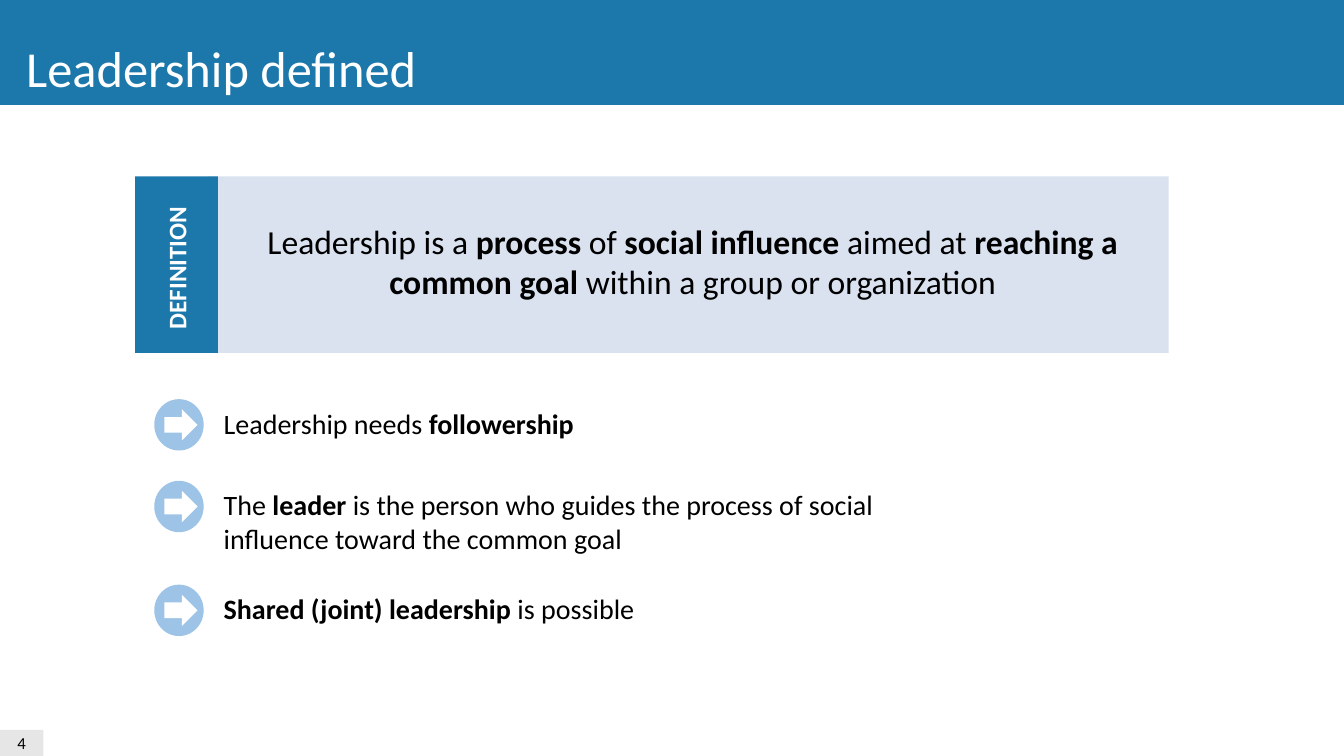
from pptx import Presentation
from pptx.dml.color import RGBColor
from pptx.enum.shapes import MSO_SHAPE
from pptx.enum.text import MSO_ANCHOR, MSO_AUTO_SIZE, PP_ALIGN
from pptx.util import Inches, Pt

BLUE = RGBColor(0x1C, 0x78, 0xAB)
PALE_BLUE = RGBColor(0xDA, 0xE2, 0xF0)
SKY = RGBColor(0x9D, 0xC3, 0xE6)
GREY = RGBColor(0xE7, 0xE6, 0xE6)
WHITE = RGBColor(0xFF, 0xFF, 0xFF)
BLACK = RGBColor(0, 0, 0)

DEFINITION = [("Leadership is a ", False), ("process ", True), ("of ", False),
              ("social influence ", True), ("aimed at ", False),
              ("reaching a common goal ", True),
              ("within a group or organization", False)]
# Top of each point and its runs (text, bold)
POINTS = [
    (3.96, [("Leadership needs ", False), ("followership", True)]),
    (4.77, [("The ", False), ("leader", True),
            (" is the person who guides the process of social influence "
             "toward the common goal", False)]),
    (5.8, [("Shared (joint) leadership ", True), ("is possible", False)]),
]


def add_block(shapes, kind, x, y, w, h, fill):
    sp = shapes.add_shape(kind, Inches(x), Inches(y), Inches(w), Inches(h))
    sp.shadow.inherit = False
    sp.fill.solid()
    sp.fill.fore_color.rgb = fill
    sp.line.fill.background()
    return sp


def write(tf, runs, size, color=BLACK, align=PP_ALIGN.LEFT):
    p = tf.paragraphs[0]
    p.alignment = align
    p.font.name = "Calibri"
    p.font.size = Pt(size)
    p.font.color.rgb = color
    for text, bold in runs:
        r = p.add_run()
        r.text = text
        if bold:
            r.font.bold = True


def add_text(shapes, x, y, w, h, runs, size, wrap=True, **style):
    sp = shapes.add_textbox(Inches(x), Inches(y), Inches(w), Inches(h))
    sp.text_frame.word_wrap = wrap
    write(sp.text_frame, runs, size, **style)
    return sp


def add_title(slide, x, y, w, h):
    add_block(slide.shapes, MSO_SHAPE.RECTANGLE, x, y, w, h, BLUE)
    title = slide.shapes.title
    title.left, title.top = Inches(x + 0.16), Inches(y + 0.33)
    title.width, title.height = Inches(4.11), Inches(0.71)
    tf = title.text_frame
    tf.word_wrap = False
    tf.auto_size = MSO_AUTO_SIZE.NONE
    tf.vertical_anchor = MSO_ANCHOR.TOP
    write(tf, [("Leadership defined", False)], 36, WHITE)
    # The title lies in front of its band
    slide.shapes._spTree.append(title._element)


def add_definition(slide, x, y, w, h):
    shapes = slide.shapes.add_group_shape().shapes
    tab_w = 0.82
    add_block(shapes, MSO_SHAPE.RECTANGLE, x + 0.73, y, w - 0.73, h, PALE_BLUE)
    add_text(shapes, x + 0.72, y + 0.39, w - 0.63, 0.91, DEFINITION, 24,
             align=PP_ALIGN.CENTER)
    add_block(shapes, MSO_SHAPE.RECTANGLE, x, y, tab_w, h, BLUE)
    label_w, label_h = 1.43, 0.4
    label = add_text(shapes, x + (tab_w - label_w) / 2, y + 0.7,
                     label_w, label_h, [("DEFINITION", True)], 18,
                     wrap=False, color=WHITE)
    label.rotation = 270


def add_point(slide, x, y, w, runs):
    shapes = slide.shapes.add_group_shape().shapes
    add_block(shapes, MSO_SHAPE.OVAL, x, y, 0.49, 0.51, SKY)
    add_block(shapes, MSO_SHAPE.RIGHT_ARROW, x + 0.1, y + 0.1, 0.33, 0.31, WHITE)
    add_text(shapes, x + 0.59, y + 0.02, w - 0.59, 0.44, runs, 20)


def add_page_number(slide, x, y, w, h):
    sp = add_block(slide.shapes, MSO_SHAPE.RECTANGLE, x, y, w, h, GREY)
    sp.text_frame.vertical_anchor = MSO_ANCHOR.MIDDLE
    write(sp.text_frame, [("4", False)], 12, align=PP_ALIGN.CENTER)


def main():
    prs = Presentation()
    prs.slide_width, prs.slide_height = Inches(13.33), Inches(7.5)
    slide = prs.slides.add_slide(prs.slide_layouts[5])
    add_page_number(slide, 0, 7.24, 0.43, 0.26)
    add_definition(slide, 1.34, 1.75, 10.25, 1.75)
    add_title(slide, 0, -0.01, 13.33, 1.05)
    for top, runs in POINTS:
        add_point(slide, 1.53, top, 7.27, runs)
    prs.save("out.pptx")


if __name__ == "__main__":
    main()
